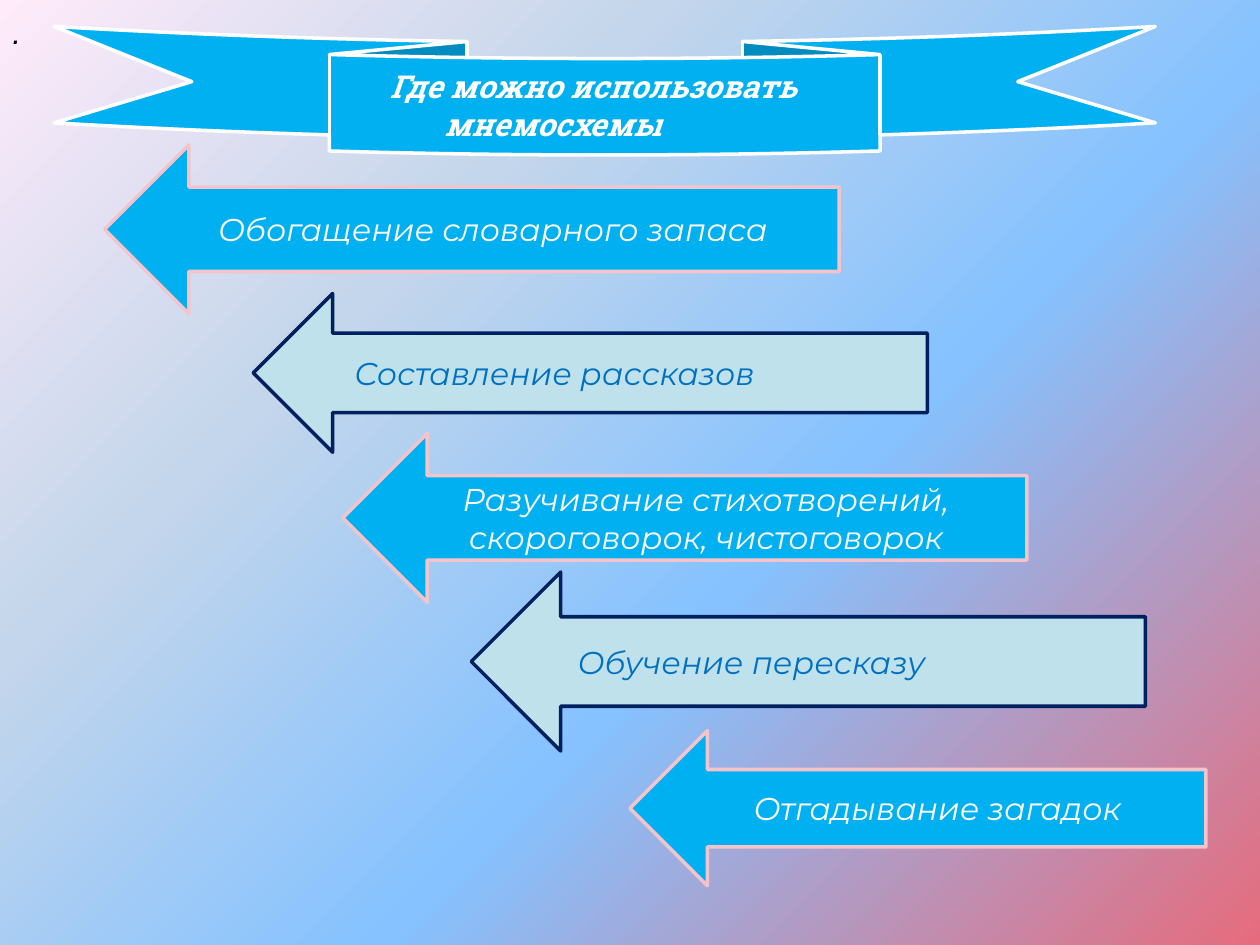
from dataclasses import dataclass

from pptx import Presentation
from pptx.dml.color import RGBColor as Rgb
from pptx.enum.shapes import MSO_SHAPE as Shape
from pptx.enum.text import MSO_ANCHOR as Anchor, MSO_AUTO_SIZE as Fit, PP_ALIGN as Align
from pptx.oxml import parse_xml
from pptx.oxml.ns import nsdecls, qn
from pptx.util import Inches, Pt


@dataclass(frozen=True)
class Theme:
    blue: str = "00B0F0"
    pale: str = "BFE1EB"
    white: str = "FFFFFF"
    pink: str = "F5C4CB"
    navy: str = "002060"
    ink: str = "0070C0"
    black: str = "000000"
    size: int = 18
    edge: int = 2
    head: str = "Roboto Slab"
    body: str = "Montserrat"
    mark: str = "Arial"
    sky: tuple = ((0, "E66C7D"), (40, "85C2FF"), (70, "C4D6EB"), (100, "FFEBFA"))


T = Theme()
# Arrow looks: fill, line, text colour, alignment, indent
BOLD = (T.blue, T.pink, T.white, Align.CENTER, 0)
SOFT = (T.pale, T.navy, T.ink, Align.LEFT, 0.39)

ARROWS = [
    ("Обогащение словарного запаса", (0.83, 1.15, 5.83, 1.34), BOLD),
    ("Составление рассказов", (2.01, 2.33, 5.35, 1.26), SOFT),
    ("Разучивание стихотворений, скороговорок, чистоговорок",
     (2.72, 3.44, 5.43, 1.34), BOLD),
    ("Обучение пересказу", (3.74, 4.54, 5.35, 1.42), SOFT),
    ("Отгадывание загадок", (5, 5.8, 4.57, 1.23), BOLD),
]
TITLE = [("Где можно использовать", 0.38), ("мнемосхемы", 0.81)]


def put(item, values):
    for name, value in values.items():
        setattr(item, name, value)


def paint(slide):
    """Fill the background with a diagonal gradient."""
    fill = slide.background.fill
    fill.gradient()
    fill.gradient_angle = 135
    stops = slide.element.find(".//" + qn("a:gsLst"))
    for stop in list(stops):
        stops.remove(stop)
    for part, tone in T.sky:
        stops.append(parse_xml(
            f'<a:gs {nsdecls("a")} pos="{part * 1000}"><a:srgbClr val="{tone}"/></a:gs>'))


def write(frame, lines, font, tone, align=Align.LEFT, bold=False, wrap=True):
    """Write (text, indent) lines into a text frame."""
    put(frame, {"word_wrap": wrap, "auto_size": Fit.NONE if wrap else Fit.SHAPE_TO_FIT_TEXT,
                "vertical_anchor": Anchor.MIDDLE})
    for i, (text, indent) in enumerate(lines):
        para = frame.add_paragraph() if i else frame.paragraphs[0]
        para.alignment = align
        if indent:
            put_off = para._p.get_or_add_pPr()
            put_off.set("marL", str(Inches(indent)))
            put_off.set("indent", "0")
        run = para.add_run()
        run.text = text
        put(run.font, {"name": font, "size": Pt(T.size), "italic": True, "bold": bold})
        run.font.color.rgb = Rgb.from_string(tone)


def draw(slide, kind, box, fill, line):
    """Add a filled and outlined preset shape."""
    shape = slide.shapes.add_shape(kind, *map(Inches, box))
    shape.shadow.inherit = False
    shape.fill.solid()
    shape.fill.fore_color.rgb = Rgb.from_string(fill)
    shape.line.color.rgb = Rgb.from_string(line)
    shape.line.width = Pt(T.edge)
    return shape


def banner(slide, box):
    """Add the ribbon, with the title on its middle band."""
    band = draw(slide, Shape.CURVED_DOWN_RIBBON, box, T.blue, T.white)
    left, top, wide, high = box
    title = slide.shapes.title
    put(title, {"left": Inches(left + wide / 4), "top": Inches(top + high / 4),
                "width": Inches(wide / 2), "height": Inches(high * 0.72)})
    write(title.text_frame, TITLE, T.head, T.white, bold=True)
    band.element.addnext(title.element)


def arrow(slide, text, box, look):
    fill, line, tone, align, indent = look
    shape = draw(slide, Shape.LEFT_ARROW, box, fill, line)
    write(shape.text_frame, [(text, indent)], T.body, tone, align)


def main():
    deck = Presentation()
    put(deck, {"slide_width": Inches(10), "slide_height": Inches(7.5)})
    slide = deck.slides.add_slide(deck.slide_layouts[5])
    paint(slide)

    # Title ribbon
    banner(slide, (0.43, 0.21, 8.74, 1.02))

    # Staircase of arrows
    for text, box, look in ARROWS:
        arrow(slide, text, box, look)

    # Corner dot
    dot = slide.shapes.add_textbox(*map(Inches, (0, 0.05, 0.34, 0.4)))
    write(dot.text_frame, [(".", 0)], T.mark, T.black, wrap=False)

    deck.save("out.pptx")


if __name__ == "__main__":
    main()
